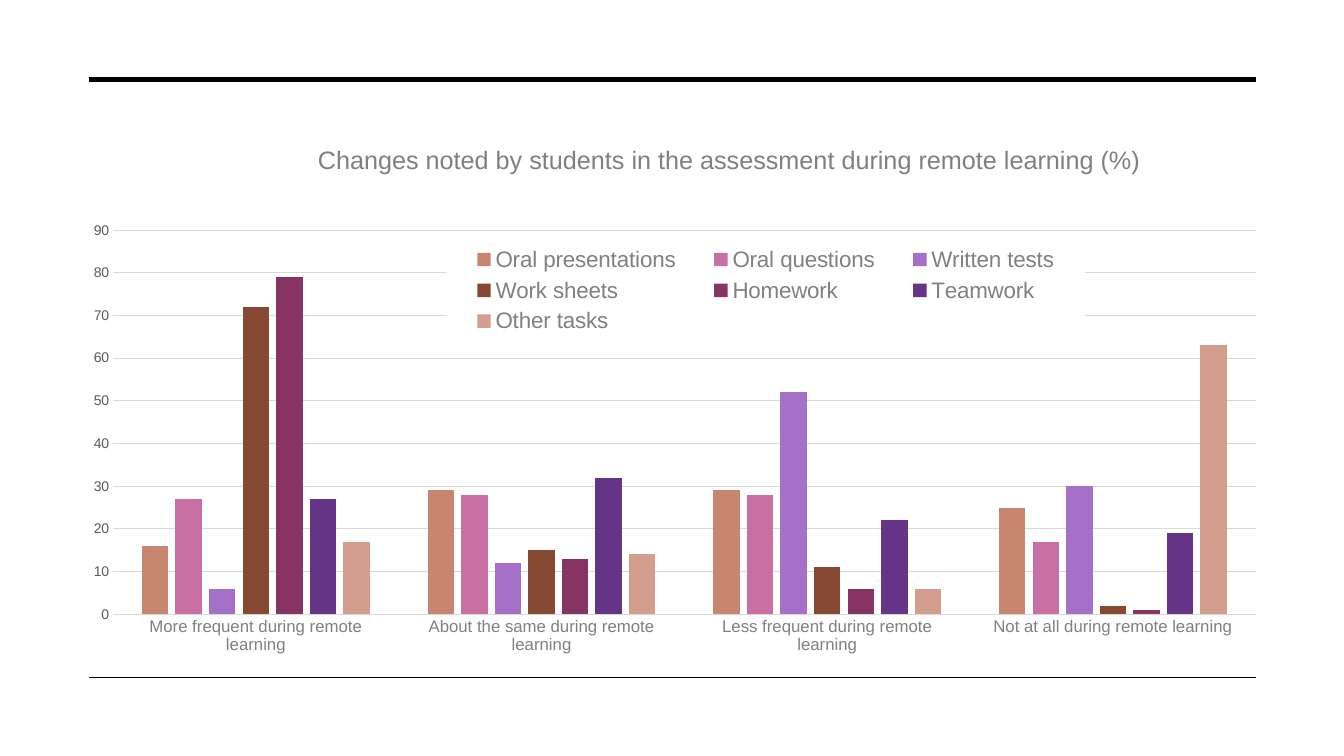
from dataclasses import dataclass

from lxml.etree import SubElement
from pptx import Presentation
from pptx.chart.data import CategoryChartData
from pptx.dml.color import RGBColor
from pptx.enum.chart import XL_CHART_TYPE as ChartType
from pptx.enum.chart import XL_LEGEND_POSITION as LegendPosition
from pptx.enum.chart import XL_TICK_MARK as TickMark
from pptx.enum.shapes import MSO_CONNECTOR as Connector
from pptx.oxml import parse_xml
from pptx.oxml.ns import nsdecls, qn
from pptx.util import Inches, Pt


@dataclass(frozen=True)
class Theme:
    font: str = "Arial"
    rule: str = "000000"
    label: str = "808080"
    scale: str = "595959"
    grid: str = "D9D9D9"
    title_size: float = 18
    legend_size: float = 16
    category_size: float = 12
    scale_size: float = 10
    grid_width: float = 0.75


THEME = Theme()
SLIDE_WIDTH, SLIDE_HEIGHT = 13.33, 7.5
FRAME = (0.88, 0.79, 11.58, 5.93)
CHART_BOX = (0.77, 1.3, 11.69, 5.19)

TITLE = "Changes noted by students in the assessment during remote learning (%)"
FREQUENCIES = [
    "More frequent during remote learning",
    "About the same during remote learning",
    "Less frequent during remote learning",
    "Not at all during remote learning",
]
TASKS = [
    ("Oral presentations", (16, 29, 29, 25), "C88670"),
    ("Oral questions", (27, 28, 28, 17), "C870A4"),
    ("Written tests", (6, 12, 52, 30), "A470C8"),
    ("Work sheets", (72, 15, 11, 2), "874934"),
    ("Homework", (79, 13, 6, 1), "873465"),
    ("Teamwork", (27, 32, 22, 19), "653487"),
    ("Other tasks", (17, 14, 6, 63), "D39E8D"),
]


def rgb(color):
    return RGBColor.from_string(color)


def style_font(font, size, color):
    font.name = THEME.font
    font.size = Pt(size)
    font.bold = False
    font.color.rgb = rgb(color)


def style_line(line, color, width):
    line.color.rgb = rgb(color)
    line.width = Pt(width)


def place(part, after=None, inner=False, **shares):
    """Lay out a chart part by shares of the chart's size."""
    for old in part.findall(qn("c:layout")):
        part.remove(old)
    layout = parse_xml(f"<c:layout {nsdecls('c')}><c:manualLayout/></c:layout>")
    settings = {"layoutTarget": "inner"} if inner else {}
    settings.update(xMode="edge", yMode="edge", **shares)
    for name, value in settings.items():
        SubElement(layout[0], qn(f"c:{name}")).set("val", str(value))
    if after is None:
        part.insert(0, layout)
    else:
        part.find(qn(after)).addnext(layout)


def add_frame_rules(slide, box):
    """Heavy rule along the top of the box, thin rule along the bottom."""
    left, top, width, height = box
    for y, weight in ((top, 3.5), (top + height, 1)):
        rule = slide.shapes.add_connector(
            Connector.STRAIGHT, Inches(left), Inches(y), Inches(left + width), Inches(y))
        style_line(rule.line, THEME.rule, weight)
        SubElement(rule._element.spPr, qn("a:effectLst"))


def style_title(chart):
    heading = chart.chart_title
    heading.text_frame.text = TITLE
    style_font(heading.text_frame.paragraphs[0].runs[0].font,
               THEME.title_size, THEME.label)
    heading.include_in_layout = False
    place(heading._element, after="c:tx", x=0.2, y=0.015)


def style_axes(chart):
    frequency_axis, percent_axis = chart.category_axis, chart.value_axis
    for axis, size, color in (
        (frequency_axis, THEME.category_size, THEME.label),
        (percent_axis, THEME.scale_size, THEME.scale),
    ):
        axis.major_tick_mark = axis.minor_tick_mark = TickMark.NONE
        style_font(axis.tick_labels.font, size, color)
    style_line(frequency_axis.format.line, THEME.grid, THEME.grid_width)

    percent_axis.minimum_scale, percent_axis.maximum_scale = 0, 90
    percent_axis.major_unit = 10
    percent_axis.tick_labels.number_format = "0"
    percent_axis.tick_labels.number_format_is_linked = False
    percent_axis.format.line.fill.background()
    style_line(percent_axis.major_gridlines.format.line, THEME.grid, THEME.grid_width)


def style_legend(chart):
    """White panel that lies over the grid lines."""
    chart.has_legend = True
    legend = chart.legend
    legend.position = LegendPosition.TOP
    legend.include_in_layout = False
    style_font(legend.font, THEME.legend_size, THEME.label)
    place(legend._element, after="c:legendPos", x=0.313, y=0.21, w=0.542, h=0.19)
    panel = parse_xml(
        f"<c:spPr {nsdecls('c', 'a')}><a:solidFill><a:srgbClr val='FFFFFF'/>"
        "</a:solidFill><a:ln><a:noFill/></a:ln></c:spPr>")
    legend._element.find(qn("c:overlay")).addnext(panel)


def add_assessment_chart(slide, box):
    answers = CategoryChartData(number_format="0")
    answers.categories = FREQUENCIES
    for task, shares, _ in TASKS:
        answers.add_series(task, shares)
    chart = slide.shapes.add_chart(
        ChartType.COLUMN_CLUSTERED, *map(Inches, box), answers).chart
    style_font(chart.font, THEME.scale_size, THEME.rule)

    # Columns
    columns = chart.plots[0]
    columns.gap_width, columns.overlap = 219, -27
    columns.vary_by_categories = False
    for series, (_, _, color) in zip(columns.series, TASKS):
        series.format.fill.solid()
        series.format.fill.fore_color.rgb = rgb(color)
    place(columns._element.getparent(), inner=True, x=0.03, y=0.19, w=0.97, h=0.735)

    # Title, axes and legend
    style_title(chart)
    style_axes(chart)
    style_legend(chart)


def main():
    deck = Presentation()
    deck.slide_width, deck.slide_height = Inches(SLIDE_WIDTH), Inches(SLIDE_HEIGHT)
    slide = deck.slides.add_slide(deck.slide_layouts[6])
    add_frame_rules(slide, FRAME)
    add_assessment_chart(slide, CHART_BOX)
    deck.save("out.pptx")


if __name__ == "__main__":
    main()
